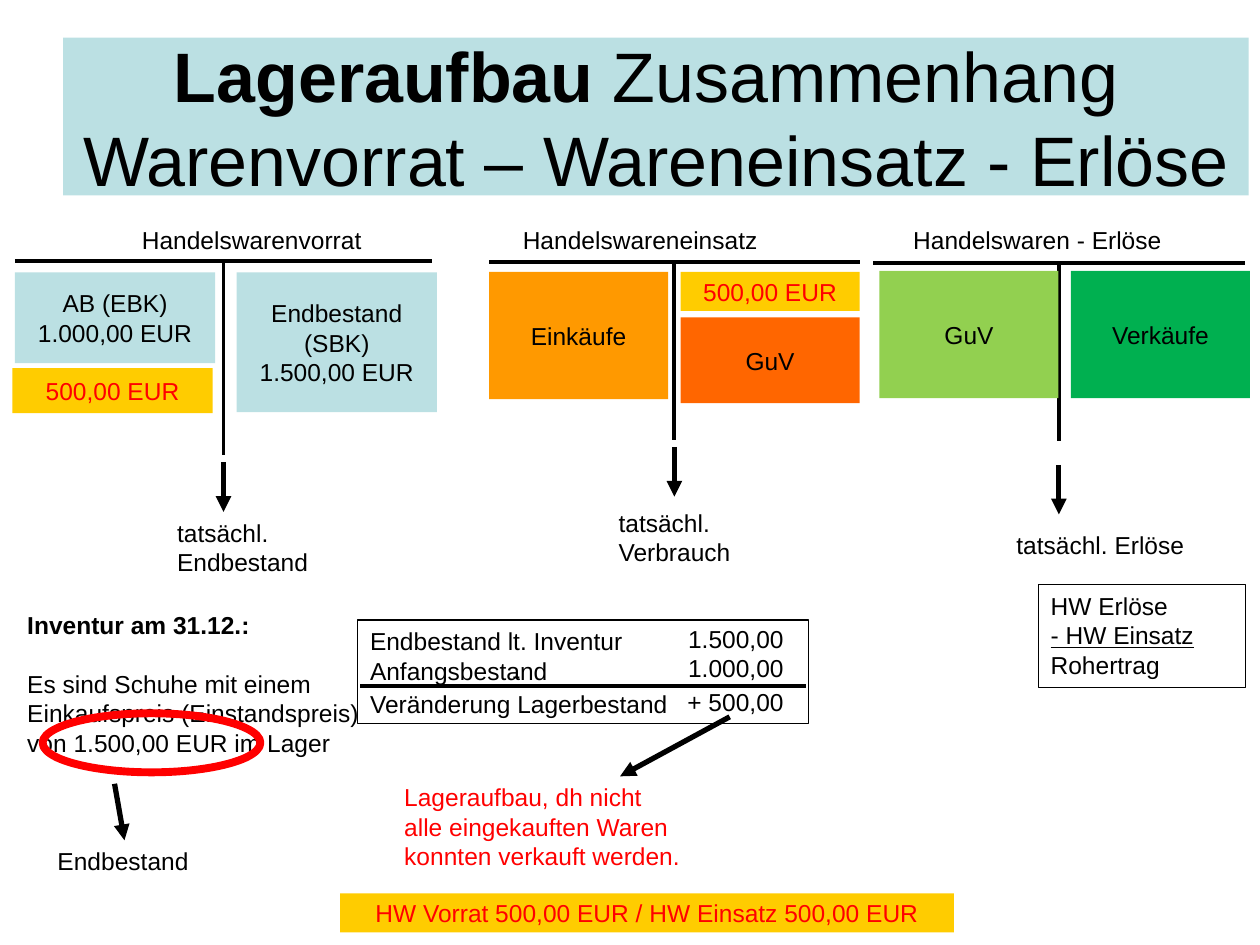
from lxml import etree
from pptx import Presentation
from pptx.dml.color import RGBColor
from pptx.enum import shapes, text
from pptx.oxml.ns import qn
from pptx.util import Cm, Pt

BLACK, RED = "000000", "FF0000"
PALE_BLUE, YELLOW = "BBE0E3", "FFCC00"
LEFT, CENTER, RIGHT = text.PP_ALIGN.LEFT, text.PP_ALIGN.CENTER, text.PP_ALIGN.RIGHT


def color(value):
    return RGBColor.from_string(value)


def format_run(run, size=14, font_color=BLACK, bold=False):
    run.font.name = "Arial"
    run.font.size = Pt(size)
    run.font.bold = bold
    run.font.color.rgb = color(font_color)


def write(shape, lines, font_color=BLACK, align=LEFT, wrap=True,
          anchor=text.MSO_ANCHOR.TOP):
    frame = shape.text_frame
    frame.text = lines
    frame.word_wrap = wrap
    frame.vertical_anchor = anchor
    for paragraph in frame.paragraphs:
        paragraph.alignment = align
        for run in paragraph.runs:
            format_run(run, font_color=font_color)
    return frame.paragraphs


def add_text(slide, left, top, width, height, lines, **style):
    box = slide.shapes.add_textbox(Cm(left), Cm(top), Cm(width), Cm(height))
    return write(box, lines, **style)


def add_box(slide, left, top, width, height, fill=None, line=None, line_width=0.75,
            kind=shapes.MSO_SHAPE.RECTANGLE):
    shape = slide.shapes.add_shape(kind, Cm(left), Cm(top), Cm(width), Cm(height))
    shape.shadow.inherit = False
    if fill:
        shape.fill.solid()
        shape.fill.fore_color.rgb = color(fill)
    else:
        shape.fill.background()
    if line:
        shape.line.color.rgb = color(line)
        shape.line.width = Pt(line_width)
    else:
        shape.line.fill.background()
    return shape


def add_card(slide, left, top, width, height, lines, fill, font_color=BLACK):
    card = add_box(slide, left, top, width, height, fill)
    write(card, lines, font_color, CENTER, False, text.MSO_ANCHOR.MIDDLE)


def add_line(slide, x1, y1, x2, y2, width=2.25, arrow=False):
    line = slide.shapes.add_connector(
        shapes.MSO_CONNECTOR.STRAIGHT, Cm(x1), Cm(y1), Cm(x2), Cm(y2))
    line.line.color.rgb = color(BLACK)
    line.line.width = Pt(width)
    if arrow:
        etree.SubElement(line.line._get_or_add_ln(), qn("a:tailEnd"), type="triangle")
    etree.SubElement(line._element.spPr, qn("a:effectLst"))


def add_arrow(slide, x1, y1, x2, y2):
    add_line(slide, x1, y1, x2, y2, 3, True)


def add_title(slide, left, top, width, height):
    title = slide.shapes.title
    title.left, title.top, title.width, title.height = map(Cm, (left, top, width, height))
    title.fill.solid()
    title.fill.fore_color.rgb = color(PALE_BLUE)
    frame = title.text_frame
    frame.word_wrap = True
    frame.vertical_anchor = text.MSO_ANCHOR.MIDDLE
    paragraph = frame.paragraphs[0]
    paragraph.alignment = CENTER
    paragraph.line_spacing = 1.0
    format_run(paragraph.add_run(), 40, bold=True)
    format_run(paragraph.add_run(), 40)
    paragraph.add_line_break()
    format_run(paragraph.add_run(), 40)
    parts = ("Lageraufbau", " Zusammenhang ", "Warenvorrat – Wareneinsatz - Erlöse")
    for run, part in zip(paragraph.runs, parts):
        run.text = part


def add_account(slide, left, top, width, stem, heading, cards, caption, arrow_gap=0.15):
    """T-account: heading and caption are (x, y, width, height, text) from the box."""
    middle = left + width / 2
    add_line(slide, left, top, left + width, top)
    add_line(slide, middle, top, middle, top + stem)
    for x, y, *rest in (heading, caption):
        add_text(slide, left + x, top + y, *rest)
    for x, y, *rest in cards:
        add_card(slide, left + x, top + y, *rest)
    arrow_top = top + stem + arrow_gap
    add_arrow(slide, middle, arrow_top, middle, arrow_top + 1)


def add_inventory(slide, left, top, width, height):
    paragraphs = add_text(
        slide, left, top, width, height,
        "Inventur am 31.12.:\nEs sind Schuhe mit einem\n"
        "Einkaufspreis (Einstandspreis)\nvon 1.500,00 EUR im Lager", wrap=False)
    paragraphs[0].runs[0].font.bold = True
    paragraphs[1].space_before = Pt(16.8)
    # Ring around the counted value
    add_box(slide, left + 0.56, top + 2.21, 4.39, 1.19, line=RED, line_width=4.5,
            kind=shapes.MSO_SHAPE.OVAL)
    add_arrow(slide, left + 2.01, top + 3.63, left + 2.21, top + 4.77)
    add_text(slide, left + 0.61, top + 4.77, 3.18, 0.86, "Endbestand", wrap=False)


def add_stock_change(slide, left, top, width, height):
    frame = add_box(slide, left, top, width, height, line=BLACK)
    labels = write(frame, "Endbestand lt. Inventur\nAnfangsbestand\nVeränderung Lagerbestand")
    add_text(slide, left + 2.87, top + 0.68, 0.69, 0.86, "-", wrap=False)
    add_line(slide, left + 0.05, top + 1.32, left + width - 0.05, top + 1.32)
    amounts = add_text(slide, left + 6.25, top - 0.05, 2.59, height,
                       "1.500,00\n1.000,00\n+ 500,00", align=RIGHT, wrap=False)
    for column in (labels, amounts):
        column[-1].line_spacing = 1.15
    # Explanation of the change
    add_arrow(slide, left + 7.5, top + 1.95, left + 5.29, top + 3.15)
    add_text(slide, left + 0.69, top + 3.15, 6.1, 2.06,
             "Lageraufbau, dh nicht\nalle eingekauften Waren\nkonnten verkauft werden.",
             font_color=RED, wrap=False)


def add_gross_profit(slide, left, top, width, height):
    frame = add_box(slide, left, top, width, height, line=BLACK, line_width=0.5)
    paragraphs = write(frame, "HW Erlöse\n- HW Einsatz\nRohertrag")
    paragraphs[1].runs[0].font.underline = True


def main():
    presentation = Presentation()
    presentation.slide_width, presentation.slide_height = Cm(25.4), Cm(19.05)
    slide = presentation.slides.add_slide(presentation.slide_layouts[5])
    add_title(slide, 1.27, 0.76, 23.9, 3.18)

    # Three accounts
    add_account(
        slide, 0.3, 5.26, 8.41, 3.91,
        (2.31, -0.84, 5.26, 0.86, "Handelswarenvorrat"),
        [(0, 0.23, 4.04, 1.83, "AB (EBK)\n1.000,00 EUR", PALE_BLUE),
         (-0.05, 2.16, 4.04, 0.91, "500,00 EUR", YELLOW, RED),
         (4.47, 0.23, 4.04, 2.82, "Endbestand\n(SBK)\n1.500,00 EUR", PALE_BLUE)],
        (3.02, 5.05, 3.3, 1.45, "tatsächl. Endbestand"))
    add_account(
        slide, 9.86, 5.28, 7.47, 3.58,
        (0.43, -0.86, 6.43, 0.86, "Handelswareneinsatz"),
        [(0, 0.2, 3.61, 2.57, "Einkäufe", "FF9900"),
         (3.86, 0.2, 3.61, 0.79, "500,00 EUR", YELLOW, RED),
         (3.86, 1.12, 3.61, 1.73, "GuV", "FF6600")],
        (2.36, 4.83, 3.3, 1.45, "tatsächl. Verbrauch"))
    add_account(
        slide, 17.6, 5.31, 7.49, 3.58,
        (0.56, -0.89, 6.43, 0.86, "Handelswaren - Erlöse"),
        [(0.13, 0.15, 3.61, 2.57, "GuV", "92D050"),
         (3.99, 0.15, 3.61, 2.57, "Verkäufe", "00B050")],
        (2.64, 5.26, 4.65, 0.86, "tatsächl. Erlöse"), arrow_gap=0.48)

    # Stocktaking, calculation and booking entry
    add_inventory(slide, 0.3, 12.17, 7.24, 3.25)
    add_stock_change(slide, 7.21, 12.5, 9.09, 2.08)
    add_gross_profit(slide, 20.93, 11.79, 4.17, 2.06)
    add_card(slide, 6.86, 18.01, 12.37, 0.79,
             "HW Vorrat 500,00 EUR / HW Einsatz 500,00 EUR", YELLOW, RED)
    presentation.save("out.pptx")


if __name__ == "__main__":
    main()
